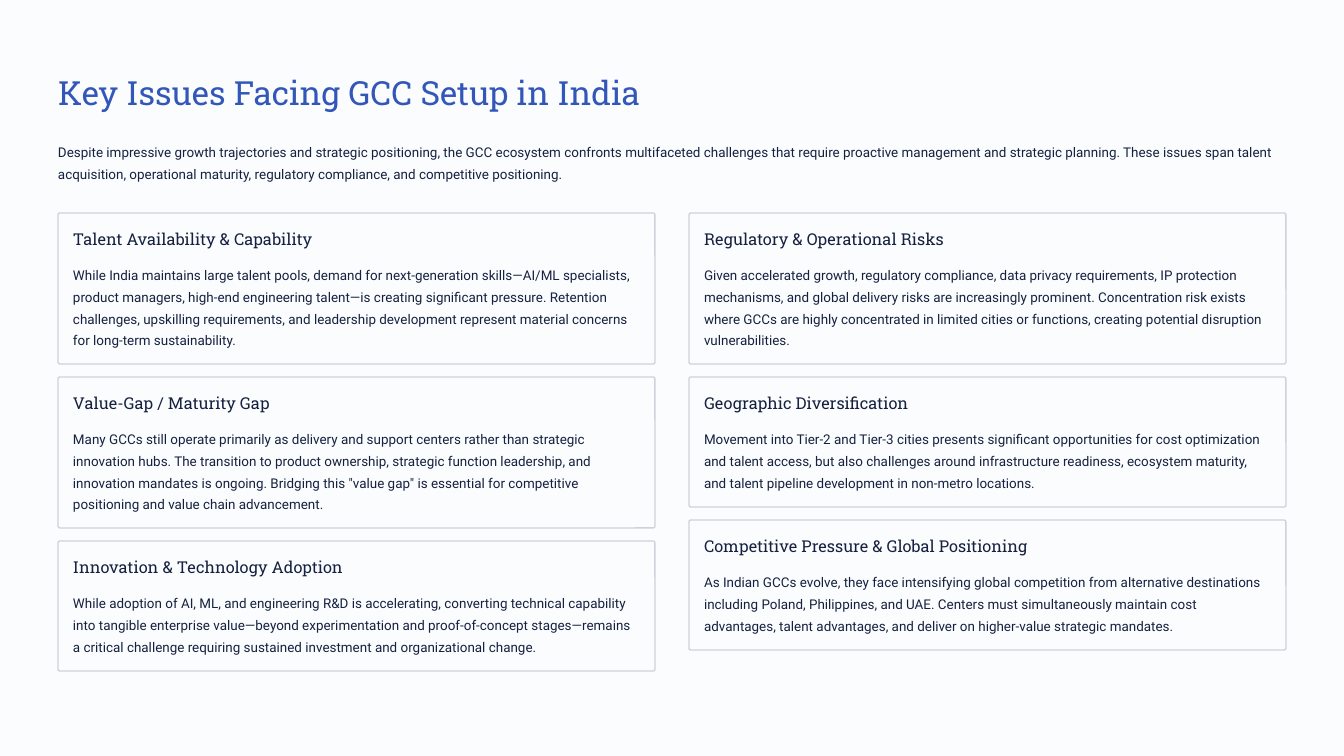
import pptx
import pptx.dml.color
import pptx.enum.shapes
import pptx.enum.text
import pptx.util

TITLE = "Key Issues Facing GCC Setup in India"
INTRO = (
    "Despite impressive growth trajectories and strategic positioning, the GCC ecosystem confronts "
    "multifaceted challenges that require proactive management and strategic planning. These issues "
    "span talent acquisition, operational maturity, regulatory compliance, and competitive positioning."
)
# Each column holds issues as (heading, body, lines of body)
COLUMNS = [
    [
        ("Talent Availability & Capability",
         "While India maintains large talent pools, demand for next-generation skills—AI/ML specialists, "
         "product managers, high-end engineering talent—is creating significant pressure. Retention "
         "challenges, upskilling requirements, and leadership development represent material concerns "
         "for long-term sustainability.", 4),
        ("Value-Gap / Maturity Gap",
         "Many GCCs still operate primarily as delivery and support centers rather than strategic "
         "innovation hubs. The transition to product ownership, strategic function leadership, and "
         "innovation mandates is ongoing. Bridging this \"value gap\" is essential for competitive "
         "positioning and value chain advancement.", 4),
        ("Innovation & Technology Adoption",
         "While adoption of AI, ML, and engineering R&D is accelerating, converting technical capability "
         "into tangible enterprise value—beyond experimentation and proof-of-concept stages—remains "
         "a critical challenge requiring sustained investment and organizational change.", 3),
    ],
    [
        ("Regulatory & Operational Risks",
         "Given accelerated growth, regulatory compliance, data privacy requirements, IP protection "
         "mechanisms, and global delivery risks are increasingly prominent. Concentration risk exists "
         "where GCCs are highly concentrated in limited cities or functions, creating potential "
         "disruption vulnerabilities.", 4),
        ("Geographic Diversification",
         "Movement into Tier-2 and Tier-3 cities presents significant opportunities for cost optimization "
         "and talent access, but also challenges around infrastructure readiness, ecosystem maturity, "
         "and talent pipeline development in non-metro locations.", 3),
        ("Competitive Pressure & Global Positioning",
         "As Indian GCCs evolve, they face intensifying global competition from alternative destinations "
         "including Poland, Philippines, and UAE. Centers must simultaneously maintain cost "
         "advantages, talent advantages, and deliver on higher-value strategic mandates.", 3),
    ],
]

PAPER, INK, BLUE, BORDER = "FBFCFE", "15213F", "3257B8", "CFD2D8"
HEADING_FONT, BODY_FONT = "Roboto Slab", "Roboto"
LEFT, CARDS_TOP = 58, 213
CARD_WIDTH, COLUMN_PITCH, CARD_GAP = 597, 631, 13
PADDING, HEADING_HEIGHT, BODY_OFFSET = 15, 21, 49
CARD_CHROME, CORNER = 65, 2
BODY_LINE = 21.58


def px(length):
    return round(length * 914400 / 84)


def color(hex_string):
    return pptx.dml.color.RGBColor.from_string(hex_string)


def place(shape, left, top, width, height):
    shape.left, shape.top, shape.width, shape.height = map(px, (left, top, width, height))


def write(shape, text, font=BODY_FONT, size=11.5, leading=18.5, ink=INK, wrap=True):
    frame = shape.text_frame
    frame.margin_left = frame.margin_top = frame.margin_right = frame.margin_bottom = 0
    frame.auto_size = pptx.enum.text.MSO_AUTO_SIZE.NONE
    frame.vertical_anchor = pptx.enum.text.MSO_ANCHOR.TOP
    frame.word_wrap = wrap
    paragraph = frame.paragraphs[0]
    paragraph.alignment = pptx.enum.text.PP_ALIGN.LEFT
    paragraph.line_spacing = pptx.util.Pt(leading)
    run = paragraph.add_run()
    run.text = text
    run.font.name = font
    run.font.size = pptx.util.Pt(size)
    run.font.color.rgb = color(ink)


def add_text(slide, box, text, **text_format):
    write(slide.shapes.add_textbox(*map(px, box)), text, **text_format)


def add_card(slide, left, top, height, heading, body):
    card = slide.shapes.add_shape(
        pptx.enum.shapes.MSO_SHAPE.ROUNDED_RECTANGLE, *map(px, (left, top, CARD_WIDTH, height)))
    card.adjustments[0] = CORNER / height
    card.shadow.inherit = False
    card.fill.solid()
    card.fill.fore_color.rgb = color(PAPER)
    card.line.color.rgb = color(BORDER)
    card.line.width = pptx.util.Pt(1.2)

    text_left, text_width = left + PADDING, CARD_WIDTH - 2 * PADDING
    add_text(slide, (text_left, top + PADDING, text_width, HEADING_HEIGHT), heading,
             font=HEADING_FONT, size=14, leading=18, wrap=False)
    add_text(slide, (text_left, top + BODY_OFFSET, text_width, height - CARD_CHROME), body)


def main():
    deck = pptx.Presentation()
    deck.slide_width, deck.slide_height = px(1344), px(756)
    slide = deck.slides.add_slide(deck.slide_layouts.get_by_name("Title Only"))
    slide.background.fill.solid()
    slide.background.fill.fore_color.rgb = color(PAPER)

    title = slide.shapes.title
    place(title, LEFT, 70, 590, 42)
    write(title, TITLE, font=HEADING_FONT, size=28.5, leading=36, ink=BLUE, wrap=False)
    add_text(slide, (LEFT, 139, 1228, 43), INTRO)

    for index, issues in enumerate(COLUMNS):
        top = CARDS_TOP
        for heading, body, lines in issues:
            height = CARD_CHROME + round(lines * BODY_LINE)
            add_card(slide, LEFT + index * COLUMN_PITCH, top, height, heading, body)
            top += height + CARD_GAP

    deck.save("out.pptx")


if __name__ == "__main__":
    main()
